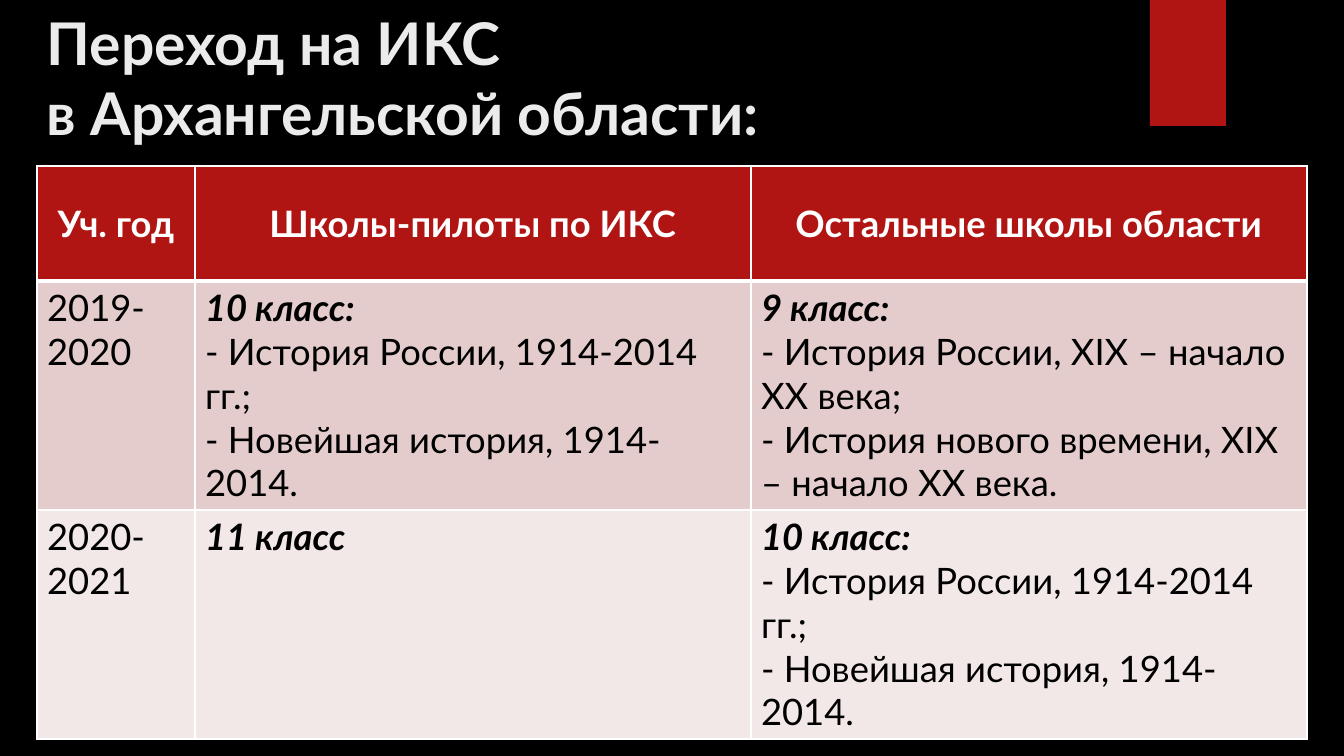
from pptx import Presentation
from pptx.dml.color import RGBColor
from pptx.enum.shapes import MSO_SHAPE
from pptx.enum.text import MSO_ANCHOR, PP_ALIGN
from pptx.oxml.ns import qn
from pptx.util import Pt
from lxml import etree

RECTANGLE = MSO_SHAPE.RECTANGLE
TOP, MIDDLE = MSO_ANCHOR.TOP, MSO_ANCHOR.MIDDLE
LEFT, CENTER = PP_ALIGN.LEFT, PP_ALIGN.CENTER

EMU_PER_PX = 914400 / 100.8
THEME = {
    "font": "Lato",
    "title_size": 42, "table_size": 26,
    "background": "000000", "title": "EBEBEB", "accent": "B01513",
    "header_text": "FFFFFF", "body_text": "000000", "border": "FFFFFF",
    "row_fills": ["B01513", "E4CCCC", "F2E8E7"],
    "thin_line": 1, "thick_line": 3,
}

HISTORY_1914 = ["- История России, 1914-2014 гг.;", "- Новейшая история, 1914-2014."]
HISTORY_XIX = ["- История России, XIX – начало ХХ века;",
               "- История нового времени, XIX – начало XX века."]
ROWS = [
    [["Уч. год"], ["Школы-пилоты по ИКС"], ["Остальные школы области"]],
    [["2019-2020"], ["10 класс:"] + HISTORY_1914, ["9 класс:"] + HISTORY_XIX],
    [["2020-2021"], ["11 класс"], ["10 класс:"] + HISTORY_1914],
]
COLUMN_WIDTHS = [158, 556, 556]
ROW_HEIGHTS = [115, 229, 229]


def px(*lengths):
    return [round(length * EMU_PER_PX) for length in lengths]


def add_span(para, text, size, color, bold=False, italic=False):
    span = para.add_run()
    span.text = text
    font = span.font
    font.name, font.size = THEME["font"], Pt(size)
    font.bold, font.italic = bold, italic
    font.color.rgb = RGBColor.from_string(color)


deck = Presentation()
deck.slide_width, deck.slide_height = px(1344, 756)
page = deck.slides.add_slide(deck.slide_layouts[6])
page.background.fill.solid()
page.background.fill.fore_color.rgb = RGBColor.from_string(THEME["background"])

# Accent tab
tab = page.shapes.add_shape(RECTANGLE, *px(1150, 0, 76, 126))
tab.shadow.inherit = False
tab.fill.solid()
tab.fill.fore_color.rgb = RGBColor.from_string(THEME["accent"])
tab.line.fill.background()

# Title
title_box = page.shapes.add_textbox(*px(37, 0, 1037, 154))
title_frame = title_box.text_frame
title_frame.word_wrap = True
title_frame.vertical_anchor = MIDDLE
title_para = title_frame.paragraphs[0]
add_span(title_para, "Переход на ИКС", THEME["title_size"], THEME["title"], bold=True)
title_para.add_line_break()
add_span(title_para, "в Архангельской области:", THEME["title_size"], THEME["title"], bold=True)

# Table of school years
table_frame = page.shapes.add_table(
    len(ROWS), len(COLUMN_WIDTHS), *px(37, 166, sum(COLUMN_WIDTHS), sum(ROW_HEIGHTS)))
table = table_frame.table
for column, width in zip(table.columns, px(*COLUMN_WIDTHS)):
    column.width = width
for row, height in zip(table.rows, px(*ROW_HEIGHTS)):
    row.height = height

for row_index, row_texts in enumerate(ROWS):
    is_header = row_index == 0
    for column_index, lines in enumerate(row_texts):
        cell = table.cell(row_index, column_index)
        cell.vertical_anchor = MIDDLE if is_header else TOP

        properties = cell._tc.get_or_add_tcPr()
        for side in ("lnL", "lnR", "lnT", "lnB"):
            under_header = (row_index, side) in ((0, "lnB"), (1, "lnT"))
            width = THEME["thick_line"] if under_header else THEME["thin_line"]
            border = etree.SubElement(properties, qn(f"a:{side}"), w=str(Pt(width)))
            border_fill = etree.SubElement(border, qn("a:solidFill"))
            etree.SubElement(border_fill, qn("a:srgbClr"), val=THEME["border"])
        cell.fill.solid()
        cell.fill.fore_color.rgb = RGBColor.from_string(THEME["row_fills"][row_index])

        for line_index, line in enumerate(lines):
            frame = cell.text_frame
            para = frame.paragraphs[0] if line_index == 0 else frame.add_paragraph()
            para.alignment = CENTER if is_header else LEFT
            is_grade = not is_header and column_index > 0 and line_index == 0
            color = THEME["header_text"] if is_header else THEME["body_text"]
            add_span(para, line, THEME["table_size"], color,
                     bold=is_header or is_grade, italic=is_grade)

deck.save("out.pptx")
